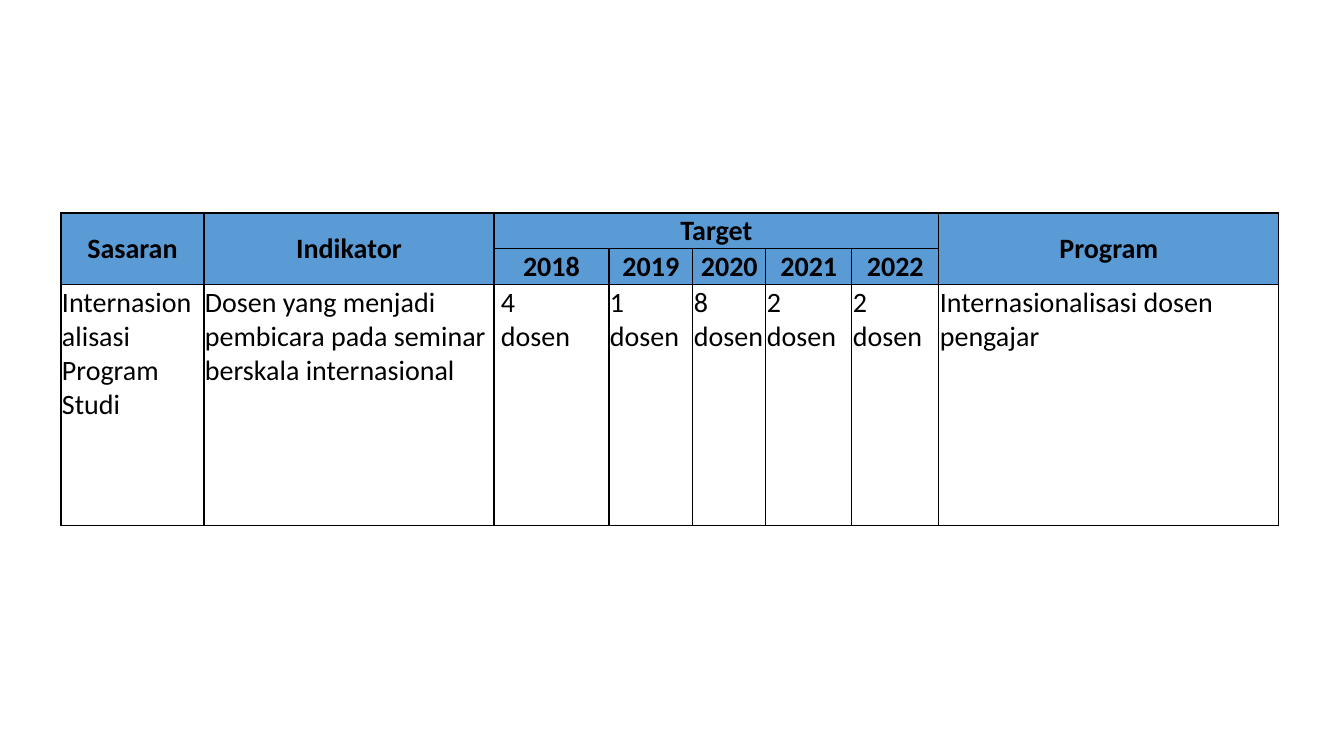
import pptx
import pptx.dml.color
import pptx.enum.text
import pptx.oxml
import pptx.oxml.ns
import pptx.util

PX = 9071.43  # EMU per px
BLACK = pptx.dml.color.RGBColor(0x00, 0x00, 0x00)
BLUE = pptx.dml.color.RGBColor(0x5B, 0x9B, 0xD5)
FONT = "Calibri"
CENTER = pptx.enum.text.PP_ALIGN.CENTER
LEFT = pptx.enum.text.PP_ALIGN.LEFT
MIDDLE = pptx.enum.text.MSO_ANCHOR.MIDDLE
TOP = pptx.enum.text.MSO_ANCHOR.TOP

COLUMN_WIDTHS = [143, 290, 115, 84, 73, 86, 87, 340]
ROW_HEIGHTS = [35, 36, 241]
FIRST_YEAR_COLUMN = 2
PROGRAM_COLUMN = 7
YEARS = ["2018", "2019", "2020", "2021", "2022"]
BODY = [
    "Internasionalisasi Program Studi",
    "Dosen yang menjadi pembicara pada seminar berskala internasional",
    "4\ndosen",
    "1 dosen",
    "8\ndosen",
    "2 dosen",
    "2 dosen",
    "Internasionalisasi dosen pengajar",
]


def px(length):
    return pptx.util.Emu(round(length * PX))


def write_text(cell, text, bold=False, align=LEFT, anchor=TOP, indent=1):
    cell.margin_left = px(indent)
    cell.margin_right = cell.margin_top = px(1)
    cell.margin_bottom = 0
    cell.vertical_anchor = anchor
    cell.text_frame.text = text
    for paragraph in cell.text_frame.paragraphs:
        paragraph.alignment = align
        paragraph.font.name = FONT
        paragraph.font.size = pptx.util.Pt(20)
        paragraph.font.bold = bold
        paragraph.font.color.rgb = BLACK


def write_heading(cell, text):
    write_text(cell, text, bold=True, align=CENTER, anchor=MIDDLE)


def add_borders(cell):
    properties = cell._tc.get_or_add_tcPr()
    for side in ("lnL", "lnR", "lnT", "lnB"):
        properties.append(pptx.oxml.parse_xml(
            f'<a:{side} {pptx.oxml.ns.nsdecls("a")} w="{pptx.util.Pt(1)}">'
            f'<a:solidFill><a:srgbClr val="{BLACK}"/></a:solidFill></a:{side}>'
        ))


def add_target_table(slide, left, top):
    frame = slide.shapes.add_table(
        len(ROW_HEIGHTS), len(COLUMN_WIDTHS), px(left), px(top),
        px(sum(COLUMN_WIDTHS)), px(sum(ROW_HEIGHTS)),
    )
    table = frame.table
    table.first_row = table.horz_banding = False
    for column, width in zip(table.columns, COLUMN_WIDTHS):
        column.width = px(width)
    for row, height in zip(table.rows, ROW_HEIGHTS):
        row.height = px(height)

    body_row = len(ROW_HEIGHTS) - 1
    for row_index in range(len(ROW_HEIGHTS)):
        for column_index in range(len(COLUMN_WIDTHS)):
            cell = table.cell(row_index, column_index)
            write_heading(cell, "")
            add_borders(cell)
            if row_index == body_row:
                cell.fill.background()
            else:
                cell.fill.solid()
                cell.fill.fore_color.rgb = BLUE

    headings = {0: "Sasaran", 1: "Indikator", PROGRAM_COLUMN: "Program"}
    for column_index, text in headings.items():
        cell = table.cell(0, column_index)
        cell.merge(table.cell(1, column_index))
        write_heading(cell, text)
    target = table.cell(0, FIRST_YEAR_COLUMN)
    target.merge(table.cell(0, PROGRAM_COLUMN - 1))
    write_heading(target, "Target")
    for column_index, year in enumerate(YEARS, FIRST_YEAR_COLUMN):
        write_heading(table.cell(1, column_index), year)
    for column_index, text in enumerate(BODY):
        indent = 7 if column_index == FIRST_YEAR_COLUMN else 1
        write_text(table.cell(body_row, column_index), text, indent=indent)


def main():
    presentation = pptx.Presentation()
    presentation.slide_width = px(1344)
    presentation.slide_height = px(756)
    slide = presentation.slides.add_slide(presentation.slide_layouts[6])
    add_target_table(slide, left=61, top=213)
    presentation.save("out.pptx")


if __name__ == "__main__":
    main()
